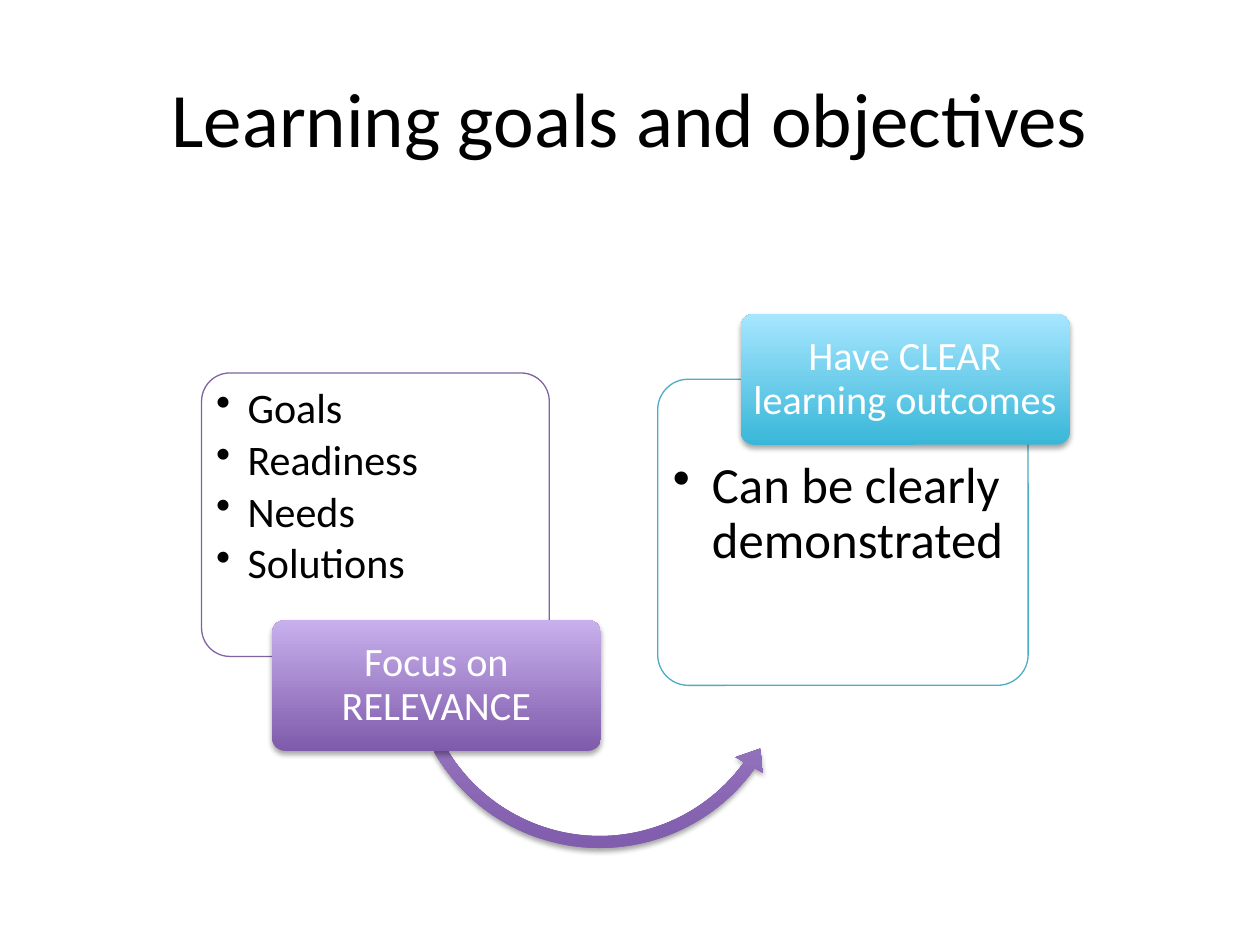
"""Build the slide "Learning goals and objectives"."""
from lxml import etree
from pptx import Presentation
from pptx.dml.color import RGBColor
from pptx.enum.shapes import MSO_SHAPE as Shape
from pptx.enum.text import MSO_ANCHOR as Anchor, PP_ALIGN as Align
from pptx.oxml.ns import qn
from pptx.util import Inches, Pt

COLORS = {
    "text": "000000", "white": "FFFFFF",
    "purple line": "8064A2", "purple dark": "7F5BAB", "purple light": "C8B0ED",
    "blue line": "4BACC6", "blue dark": "39B7D8", "blue light": "A7E6FF",
}


def color(name):
    return RGBColor.from_string(COLORS[name])


def write(shape, lines, size, ink="text", align=Align.CENTER, anchor=Anchor.MIDDLE,
          insets=(0.05, 0.03, 0.05, 0.03), line_spacing=0.9, hang=0, after=0):
    frame = shape.text_frame
    frame.word_wrap = True
    frame.vertical_anchor = anchor
    (frame.margin_left, frame.margin_top,
     frame.margin_right, frame.margin_bottom) = map(Inches, insets)
    frame.text = "\n".join(lines)
    for paragraph in frame.paragraphs:
        paragraph.alignment = align
        paragraph.line_spacing = line_spacing
        paragraph.space_after = Pt(after)
        paragraph.font.size = Pt(size)
        paragraph.font.name = "Calibri"
        paragraph.font.color.rgb = color(ink)
        if hang:
            properties = paragraph._p.get_or_add_pPr()
            properties.set("marL", str(Inches(hang)))
            properties.set("indent", str(-Inches(hang)))
            etree.SubElement(properties, qn("a:buChar")).set("char", "•")


def add_glossy(kind, box, adjustments, hue):
    shape = slide.shapes.add_shape(kind, *map(Inches, box))
    for index, value in enumerate(adjustments):
        shape.adjustments[index] = value
    shape.line.fill.background()
    shape.fill.gradient()
    shape.fill.gradient_angle = 90
    for stop, shade in zip(shape.fill.gradient_stops, ("dark", "light")):
        stop.color.rgb = color(f"{hue} {shade}")
    shape.shadow.inherit = False
    effects = shape._element.spPr.find(qn("a:effectLst"))
    shadow = etree.SubElement(effects, qn("a:outerShdw"), blurRad=str(Pt(3.1)),
                              dist=str(Pt(1.8)), dir="5400000", rotWithShape="0")
    shade = etree.SubElement(shadow, qn("a:srgbClr"), val=COLORS["text"])
    etree.SubElement(shade, qn("a:alpha"), val="35000")
    return shape


deck = Presentation()
deck.slide_width, deck.slide_height = Inches(10), Inches(7.5)
slide = deck.slides.add_slide(deck.slide_layouts[6])

title = slide.shapes.add_textbox(Inches(0.5), Inches(0.3), Inches(9), Inches(1.25))
write(title, ["Learning goals and objectives"], 44,
      insets=(0.1, 0.05, 0.1, 0.05), line_spacing=1)

stages = [
    ("purple", (1.6, 2.96, 2.76, 2.25), ["Goals", "Readiness", "Needs", "Solutions"],
     24, 0.25, 0.05, (2.16, 4.92), "Focus on RELEVANCE"),
    ("blue", (5.22, 3.01, 2.94, 2.43), ["Can be clearly demonstrated"],
     29, 0.31, 0.57, (5.88, 2.49), "Have CLEAR learning outcomes"),
]
for hue, card_box, points, size, hang, top_inset, label_corner, heading in stages:
    card = slide.shapes.add_shape(Shape.ROUNDED_RECTANGLE, *map(Inches, card_box))
    card.adjustments[0] = 0.1
    card.shadow.inherit = False
    card.fill.solid()
    card.fill.fore_color.rgb = color("white")
    card.line.color.rgb = color(f"{hue} line")
    card.line.width = Pt(0.75)
    write(card, points, size, align=Align.LEFT, anchor=Anchor.TOP,
          insets=(0.05, top_inset, 0.05, 0.05), hang=hang, after=size * 0.15)

    if hue == "purple":
        add_glossy(Shape.LEFT_CIRCULAR_ARROW, (3.17, 3.63, 3.18, 3.18),
                   (0.03, 3.64, 21.39, 90.25, 0.04), hue)

    label = add_glossy(Shape.ROUNDED_RECTANGLE, (*label_corner, 2.61, 1.04), (0.1,), hue)
    write(label, [heading], 23, ink="white")

deck.save("out.pptx")
